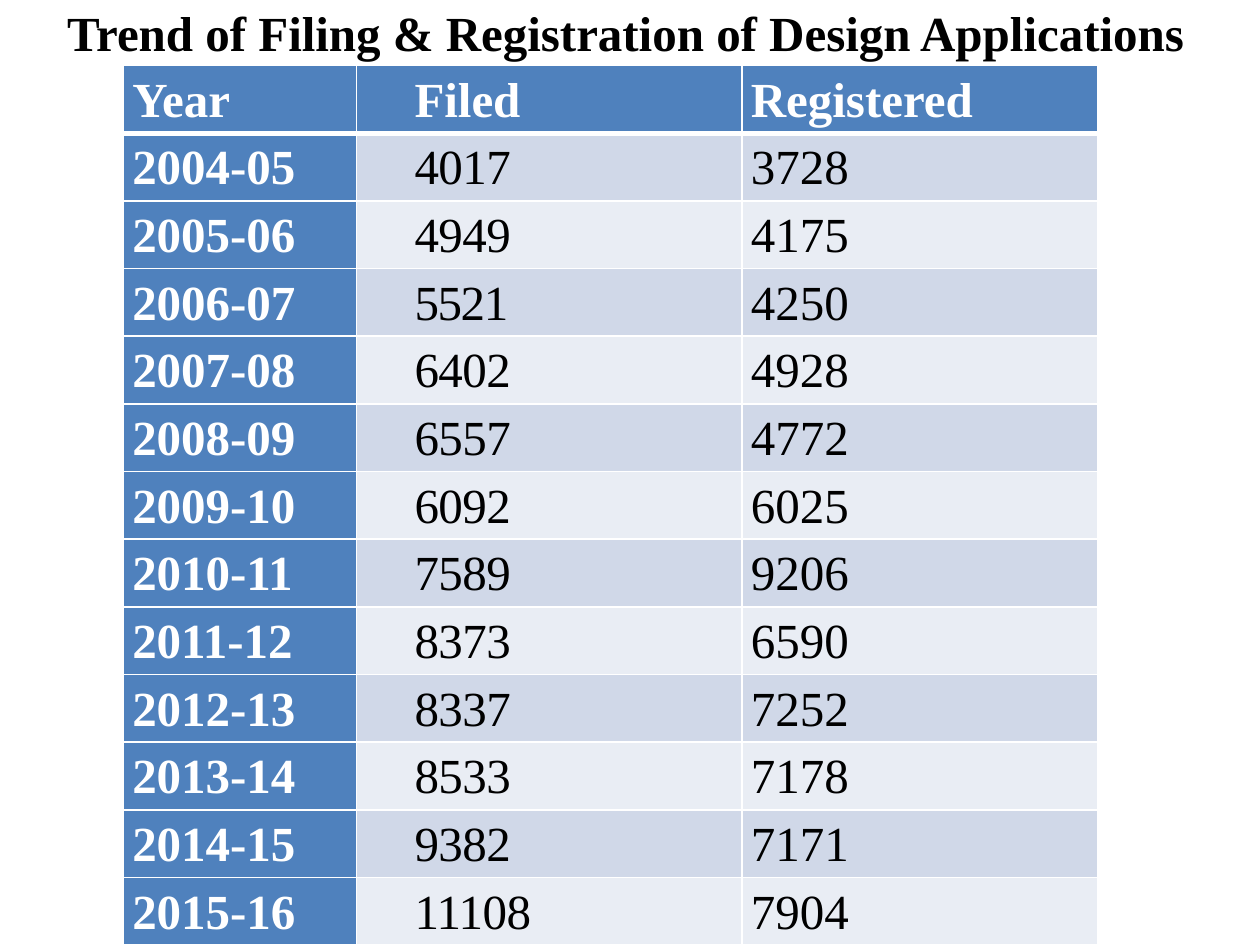
"""Build a slide with a table of design applications filed and registered by year."""
from lxml import etree
from pptx import Presentation
from pptx.dml import color
from pptx.enum import text
from pptx.oxml import ns
from pptx.util import Inches, Pt

WHITE = color.RGBColor(0xFF, 0xFF, 0xFF)
BLACK = color.RGBColor(0x00, 0x00, 0x00)
BLUE = color.RGBColor(0x4F, 0x81, 0xBD)
BANDS = [color.RGBColor(0xE9, 0xED, 0xF4), color.RGBColor(0xD0, 0xD8, 0xE8)]

ROWS = [
    ("Year", "Filed", "Registered"),
    ("2004-05", "4017", "3728"),
    ("2005-06", "4949", "4175"),
    ("2006-07", "5521", "4250"),
    ("2007-08", "6402", "4928"),
    ("2008-09", "6557", "4772"),
    ("2009-10", "6092", "6025"),
    ("2010-11", "7589", "9206"),
    ("2011-12", "8373", "6590"),
    ("2012-13", "8337", "7252"),
    ("2013-14", "8533", "7178"),
    ("2014-15", "9382", "7171"),
    ("2015-16", "11108", "7904"),
]
COLUMN_WIDTHS = [1.85, 3.06, 2.82]
CELL_FORMAT = {
    "margin_left": Inches(0.07),
    "margin_right": Inches(0.07),
    "margin_top": 0,
    "margin_bottom": 0,
}


def write(paragraph, words, ink, bold):
    run = paragraph.add_run()
    run.text = words
    font_format = {"name": "Times New Roman", "size": Pt(28), "bold": bold}
    for name, value in font_format.items():
        setattr(run.font, name, value)
    run.font.color.rgb = ink
    return run


def add_border(cell, side, points):
    properties = cell._tc.get_or_add_tcPr()
    line = etree.SubElement(properties, ns.qn(f"a:ln{side}"), w=str(Pt(points)))
    fill = etree.SubElement(line, ns.qn("a:solidFill"))
    etree.SubElement(fill, ns.qn("a:srgbClr"), val=str(WHITE))


presentation = Presentation()
presentation.slide_width = Inches(10)
presentation.slide_height = Inches(7.5)
slide = presentation.slides.add_slide(presentation.slide_layouts[6])

title = slide.shapes.add_textbox(Inches(0.12), Inches(-0.03), Inches(9.69), Inches(1.04))
title.text_frame.word_wrap = True
title.text_frame.auto_size = text.MSO_AUTO_SIZE.SHAPE_TO_FIT_TEXT
paragraph = title.text_frame.paragraphs[0]
paragraph.alignment = text.PP_ALIGN.CENTER
write(paragraph, "Trend of Filing & Registration of Design Applications", BLACK, True)

table = slide.shapes.add_table(
    len(ROWS), len(COLUMN_WIDTHS),
    Inches(0.98), Inches(0.52), Inches(sum(COLUMN_WIDTHS)), Inches(6.98),
).table
table.first_col = True
for column, width in zip(table.columns, COLUMN_WIDTHS):
    column.width = Inches(width)

for row_index, values in enumerate(ROWS):
    for column_index, value in enumerate(values):
        cell = table.cell(row_index, column_index)
        for name, setting in CELL_FORMAT.items():
            setattr(cell, name, setting)
        heading = row_index == 0 or column_index == 0
        borders = {
            "L": 1,
            "R": 1,
            "T": 3 if row_index == 1 else 1,
            "B": 3 if row_index == 0 else 1,
        }
        for side, points in borders.items():
            add_border(cell, side, points)
        cell.fill.solid()
        cell.fill.fore_color.rgb = BLUE if heading else BANDS[row_index % 2]
        paragraph = cell.text_frame.paragraphs[0]
        paragraph.line_spacing = 1.15
        run = write(paragraph, value, WHITE if heading else BLACK, heading)
        if column_index == 1:
            paragraph_properties = paragraph._p.get_or_add_pPr()
            paragraph_properties.set("marL", str(Inches(0.39)))
            paragraph_properties.set("indent", "0")
            if not heading:
                spacing = "-80" if value == "5521" else "-30"
                run._r.get_or_add_rPr().set("spc", spacing)

presentation.save("out.pptx")
